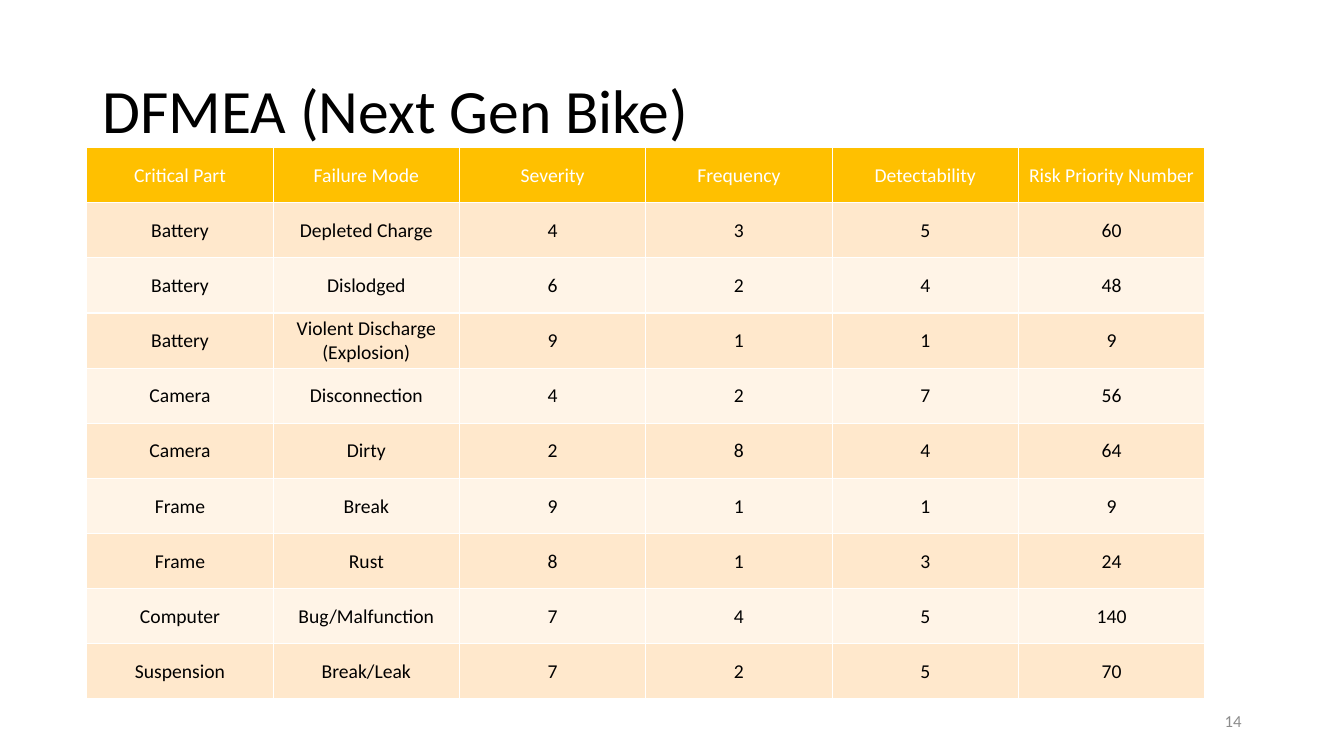
from dataclasses import dataclass

from pptx import Presentation
from pptx.dml.color import RGBColor as RGB
from pptx.enum.text import MSO_ANCHOR as Anchor, PP_ALIGN as Align
from pptx.util import Cm, Pt


@dataclass(frozen=True)
class Theme:
    """Colours, font and type sizes of the slide."""
    font: str = "Calibri"
    ink: str = "000000"
    header_ink: str = "FFFFFF"
    muted: str = "8C8C8C"
    header: str = "FFC000"
    bands: tuple = ("FFE8CC", "FFF4E7")
    title_size: int = 44
    cell_size: int = 14
    number_size: int = 12


THEME = Theme()
HEADINGS = ("Critical Part", "Failure Mode", "Severity", "Frequency",
            "Detectability", "Risk Priority Number")
FAILURES = (
    ("Battery", "Depleted Charge", 4, 3, 5, 60),
    ("Battery", "Dislodged", 6, 2, 4, 48),
    ("Battery", "Violent Discharge (Explosion)", 9, 1, 1, 9),
    ("Camera", "Disconnection", 4, 2, 7, 56),
    ("Camera", "Dirty", 2, 8, 4, 64),
    ("Frame", "Break", 9, 1, 1, 9),
    ("Frame", "Rust", 8, 1, 3, 24),
    ("Computer", "Bug/Malfunction", 7, 4, 5, 140),
    ("Suspension", "Break/Leak", 7, 2, 5, 70),
)


def write(tf, text, size, color, align):
    """Put one formatted paragraph in a text frame."""
    tf.text = text
    tf.word_wrap = True
    p = tf.paragraphs[0]
    p.alignment = align
    p.font.name, p.font.size, p.font.bold = THEME.font, Pt(size), False
    p.font.color.rgb = RGB.from_string(color)
    return p


def add_title(s, text):
    """Place and format the title placeholder."""
    sp = s.shapes.title
    sp.left, sp.top, sp.width, sp.height = Cm(2.33), Cm(1.01), Cm(29.21), Cm(3.68)
    p = write(sp.text_frame, text, THEME.title_size, THEME.ink, Align.LEFT)
    p.line_spacing = 0.9
    sp.text_frame.vertical_anchor = Anchor.MIDDLE


def fill_cell(cell, value, fill, ink):
    """Write and colour one table cell."""
    write(cell.text_frame, str(value), THEME.cell_size, ink, Align.CENTER)
    cell.vertical_anchor = Anchor.MIDDLE
    cell.margin_left = cell.margin_right = cell.margin_top = Cm(0.02)
    cell.margin_bottom = 0
    cell.fill.solid()
    cell.fill.fore_color.rgb = RGB.from_string(fill)


def add_failure_table(s):
    """Add the failure mode table with banded rows."""
    rows = (HEADINGS,) + FAILURES
    table = s.shapes.add_table(len(rows), len(HEADINGS), Cm(2.19), Cm(3.72),
                               Cm(28.17), Cm(13.89)).table
    for i, row in enumerate(rows):
        fill = THEME.bands[(i - 1) % 2] if i else THEME.header
        ink = THEME.ink if i else THEME.header_ink
        for j, value in enumerate(row):
            fill_cell(table.cell(i, j), value, fill, ink)


def add_slide_number(s, text):
    """Add the page number at the lower right."""
    tf = s.shapes.add_textbox(Cm(23.92), Cm(17.65), Cm(7.62), Cm(1.01)).text_frame
    write(tf, text, THEME.number_size, THEME.muted, Align.RIGHT)
    tf.vertical_anchor = Anchor.MIDDLE


def main():
    """Build the slide and save it."""
    prs = Presentation()
    prs.slide_width, prs.slide_height = Cm(33.87), Cm(19.05)
    s = prs.slides.add_slide(prs.slide_layouts[5])
    add_title(s, "DFMEA (Next Gen Bike)")
    add_failure_table(s)
    add_slide_number(s, "14")
    prs.save("out.pptx")


if __name__ == "__main__":
    main()
